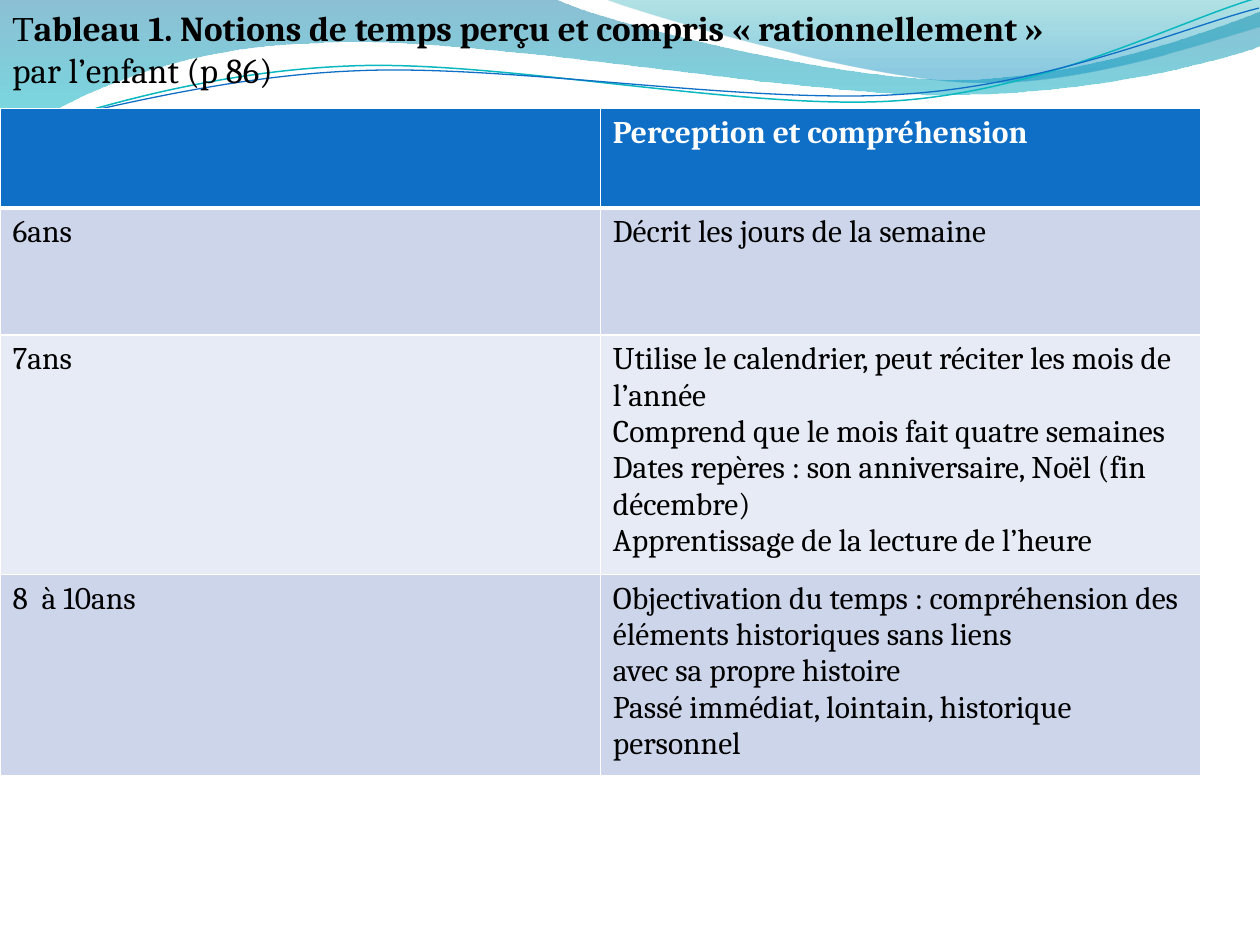
from lxml.etree import SubElement
from pptx import Presentation
from pptx.dml.color import RGBColor
from pptx.enum.text import MSO_ANCHOR
from pptx.oxml.ns import qn
from pptx.util import Inches, Pt

COLORS = {
    "text": "000000", "white": "FFFFFF", "header": "0F6FC6",
    "band": "CCD5EA", "light": "E7EBF5", "teal": "0AB8BF",
    "deep": "0074A1", "cyan": "00C6CF", "sea": "00A1A9", "sky": "008BBF",
}


def add_text(paragraph, text, size=18, font="Cambria", color="text", bold=False):
    run = paragraph.add_run()
    run.text = text
    run.font.size = Pt(size)
    run.font.name = font
    run.font.bold = bold
    run.font.color.rgb = RGBColor.from_string(COLORS[color])


def add_wave(shapes, start, segments, closed):
    points = [(Inches(segment[i]), Inches(segment[i + 1]))
              for segment in segments for i in range(0, len(segment), 2)]
    builder = shapes.build_freeform(Inches(start[0]), Inches(start[1]))
    builder.add_line_segments(points, close=closed)
    wave = builder.convert_to_shape()
    wave.shadow.inherit = False
    steps = iter(list(wave.element.iter(qn("a:lnTo"))))
    for segment in segments:
        first = next(steps)
        if len(segment) == 6:
            curve = first.makeelement(qn("a:cubicBezTo"))
            first.addprevious(curve)
            for step in (first, next(steps), next(steps)):
                curve.append(step[0])
                step.getparent().remove(step)
    return wave


prs = Presentation()
prs.slide_width, prs.slide_height = Inches(10), Inches(7.5)
slide = prs.slides.add_slide(prs.slide_layouts[6])

bands = [
    ((0, 0),
     [(4.4, -0.01), (4.76, 0.17, 6.64, 0.63, 7.58, 0.63),
      (8.53, 0.63, 9.58, 0.26, 10, 0.09), (10.01, 0.36),
      (9.83, 0.44, 8.7, 0.76, 7.46, 0.75), (6.22, 0.75, 3.82, 0.28, 2.57, 0.34),
      (1.29, 0.36, 0.46, 0.83, -0.01, 1.13), (0, 0)],
     [(0, "deep", 45), (1, "cyan", 55)]),
    ((4.79, -0.01),
     [(5.09, 0.11, 6.82, 0.62, 7.69, 0.65), (8.56, 0.69, 9.61, 0.32, 10, 0.21),
      (10, 0), (4.79, -0.01)],
     [(0, "sea", 30), (0.8, "sky", 45)]),
]
for start, segments, stops in bands:
    band = add_wave(slide.shapes, start, segments, True)
    band.line.fill.background()
    band.fill.gradient()
    band.fill.gradient_angle = 270
    for stop, (position, color, opacity) in zip(band.fill.gradient_stops, stops):
        stop.position = position
        stop.color.rgb = RGBColor.from_string(COLORS[color])
    for tint, (position, color, opacity) in zip(band.element.iter(qn("a:srgbClr")), stops):
        SubElement(tint, qn("a:alpha"), val=str(opacity * 1000))

strands = [
    ((-0.02, 0.87),
     [(0.47, 0.72, 1.58, 0.41, 2.77, 0.42), (3.96, 0.42, 5.91, 0.93, 7.12, 0.9),
      (8.32, 0.87, 9.4, 0.36, 10, 0.22)], "teal", 0.85),
    ((-0.02, 0.8),
     [(0.46, 0.75, 1.64, 0.45, 2.83, 0.46), (4.03, 0.46, 5.96, 0.88, 7.16, 0.85),
      (8.35, 0.83, 9.42, 0.42, 10.01, 0.3)], "header", 0.75),
]
ribbon = slide.shapes.add_group_shape()
for start, segments, color, width in strands:
    strand = add_wave(ribbon.shapes, start, segments, False)
    strand.rotation = 357.3
    strand.fill.background()
    strand.line.color.rgb = RGBColor.from_string(COLORS[color])
    strand.line.width = Pt(width)

title = slide.shapes.add_textbox(0, 0, Inches(10), Inches(1.11)).text_frame
title.word_wrap = True
title.vertical_anchor = MSO_ANCHOR.TOP
heading = title.paragraphs[0]
add_text(heading, "T", size=20, font="Times New Roman")
add_text(heading, "ableau 1. Notions de temps perçu et compris « rationnellement »", size=20, bold=True)
add_text(title.add_paragraph(), "par l’enfant (p 86)", size=20)

rows = [
    (0.79, "header", "", ["Perception et compréhension"]),
    (1.01, "band", "6ans", ["Décrit les jours de la semaine"]),
    (1.9, "light", "7ans", [
        "Utilise le calendrier, peut réciter les mois de l’année",
        "Comprend que le mois fait quatre semaines",
        "Dates repères : son anniversaire, Noël (fin décembre)",
        "Apprentissage de la lecture de l’heure"]),
    (1.6, "band", "8  à 10ans", [
        "Objectivation du temps : compréhension des éléments historiques sans liens",
        "avec sa propre histoire",
        "Passé immédiat, lointain, historique personnel"]),
]
table_height = sum(row[0] for row in rows)
ages = slide.shapes.add_table(len(rows), 2, 0, Inches(0.86), Inches(9.53), Inches(table_height)).table

for row_index, (height, fill, age, abilities) in enumerate(rows):
    ages.rows[row_index].height = Inches(height)
    is_header = row_index == 0
    for column_index, lines in enumerate([[age], abilities]):
        cell = ages.cell(row_index, column_index)
        properties = cell._tc.get_or_add_tcPr()
        for side in ("lnL", "lnR", "lnT", "lnB"):
            thick = (row_index, side) in [(0, "lnB"), (1, "lnT")]
            border = SubElement(properties, qn(f"a:{side}"), w=str(Pt(3 if thick else 1)))
            SubElement(SubElement(border, qn("a:solidFill")), qn("a:srgbClr"), val=COLORS["white"])
        cell.fill.solid()
        cell.fill.fore_color.rgb = RGBColor.from_string(COLORS[fill])
        for line_index, line in enumerate(lines):
            frame = cell.text_frame
            paragraph = frame.add_paragraph() if line_index else frame.paragraphs[0]
            if line:
                add_text(paragraph, line, color="white" if is_header else "text", bold=is_header)

prs.save("out.pptx")
